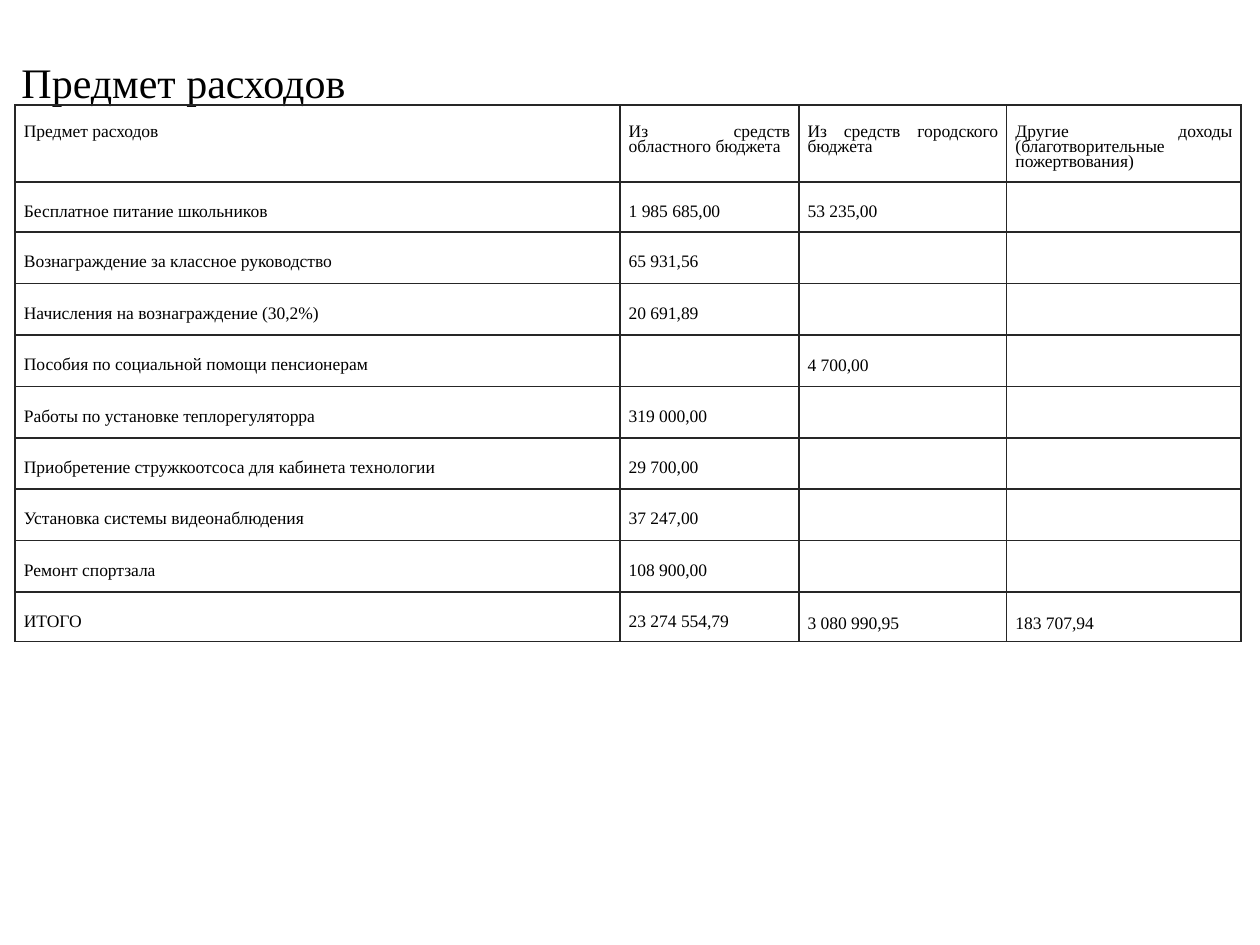
from dataclasses import dataclass
from typing import NamedTuple

from lxml import etree
from pptx import Presentation
from pptx import util as u
from pptx.dml import color
from pptx.enum import text
from pptx.oxml import ns


@dataclass(frozen=True)
class Theme:
    font: str = "Times New Roman"
    ink: str = "000000"
    rule: str = "262626"
    rule_width: float = 1
    title_size: float = 24
    body_size: float = 10


class Insets(NamedTuple):
    left: float
    top: float
    right: float
    bottom: float


class Expense(NamedTuple):
    subject: str
    regional: str = ""
    city: str = ""
    other: str = ""


THEME = Theme()
TITLE_INSETS = Insets(0.05, 0.35, 0.05, 0)
CELL_INSETS = Insets(0.07, 0.16, 0.07, 0.07)
LOWERED_INSETS = CELL_INSETS._replace(top=0.17)
LEFT, TOP = 0.12, 0.21
COLUMNS = (4.8, 1.42, 1.65, 1.86)
HEAD_HEIGHT, ROW_HEIGHT = 0.61, 0.35

TITLE = "Предмет расходов"
HEADINGS = Expense(
    "Предмет расходов",
    "Из средств областного бюджета",
    "Из средств городского бюджета",
    "Другие доходы (благотворительные пожертвования)",
)
EXPENSES = [
    Expense("Бесплатное питание школьников", "1 985 685,00", "53 235,00"),
    Expense("Вознаграждение за классное руководство", "65 931,56"),
    Expense("Начисления на вознаграждение (30,2%)", "20 691,89"),
    Expense("Пособия по социальной помощи пенсионерам", city="4 700,00"),
    Expense("Работы по установке теплорегуляторра", "319 000,00"),
    Expense("Приобретение стружкоотсоса для кабинета технологии", "29 700,00"),
    Expense("Установка системы видеонаблюдения", "37 247,00"),
    Expense("Ремонт спортзала", "108 900,00"),
    Expense("ИТОГО", "23 274 554,79", "3 080 990,95", "183 707,94"),
]


def write(cell, words: str, *, size: float = THEME.body_size,
          insets: Insets = CELL_INSETS, spacing: float = 1.0,
          align=text.PP_ALIGN.JUSTIFY) -> None:
    """Fill one cell with formatted text."""
    cell.margin_left, cell.margin_top, cell.margin_right, cell.margin_bottom = map(
        u.Inches, insets)
    paragraph = cell.text_frame.paragraphs[0]
    paragraph.alignment = align
    paragraph.line_spacing = spacing
    if not words:  # keeps an empty cell from stretching its row
        paragraph._p.get_or_add_endParaRPr().set("sz", str(int(size * 100)))
        return
    run = paragraph.add_run()
    run.text = words
    run.font.name = THEME.font
    run.font.size = u.Pt(size)
    run.font.color.rgb = color.RGBColor.from_string(THEME.ink)


def rule_cell(cell, sides: str) -> None:
    """Clear the cell's fill and draw borders on the given sides (L, R, T, B)."""
    cell.fill.background()
    properties = cell._tc.get_or_add_tcPr()
    for position, side in enumerate(sides):
        line = etree.Element(ns.qn(f"a:ln{side}"), w=str(u.Pt(THEME.rule_width)))
        fill = etree.SubElement(line, ns.qn("a:solidFill"))
        etree.SubElement(fill, ns.qn("a:srgbClr"), val=THEME.rule)
        properties.insert(position, line)


def build_table(slide) -> None:
    heights = [HEAD_HEIGHT] * 2 + [ROW_HEIGHT] * len(EXPENSES)
    table = slide.shapes.add_table(
        len(heights), len(COLUMNS), u.Inches(LEFT), u.Inches(TOP),
        u.Inches(sum(COLUMNS)), u.Inches(sum(heights))).table
    table.first_row = table.horz_banding = False
    for column, width in zip(table.columns, COLUMNS):
        column.width = u.Inches(width)
    for row, height in zip(table.rows, heights):
        row.height = u.Inches(height)

    # Title row across all columns
    title = table.cell(0, 0)
    title.merge(table.cell(0, len(COLUMNS) - 1))
    write(title, TITLE, size=THEME.title_size, insets=TITLE_INSETS, spacing=0.74)
    for cell in table.rows[0].cells:
        rule_cell(cell, "B")

    # Column headings, then expenses
    for r, record in enumerate([HEADINGS, *EXPENSES], start=1):
        for c, words in enumerate(record):
            cell = table.cell(r, c)
            if r == 1:
                write(cell, words, spacing=0.78)
            elif r > 2 and c > 1:
                write(cell, words, insets=LOWERED_INSETS, align=text.PP_ALIGN.LEFT)
            else:
                write(cell, words)
            rule_cell(cell, "LRTB")


def main() -> None:
    deck = Presentation()
    deck.slide_width, deck.slide_height = u.Inches(10), u.Inches(7.5)
    build_table(deck.slides.add_slide(deck.slide_layouts[6]))
    deck.save("out.pptx")


if __name__ == "__main__":
    main()
